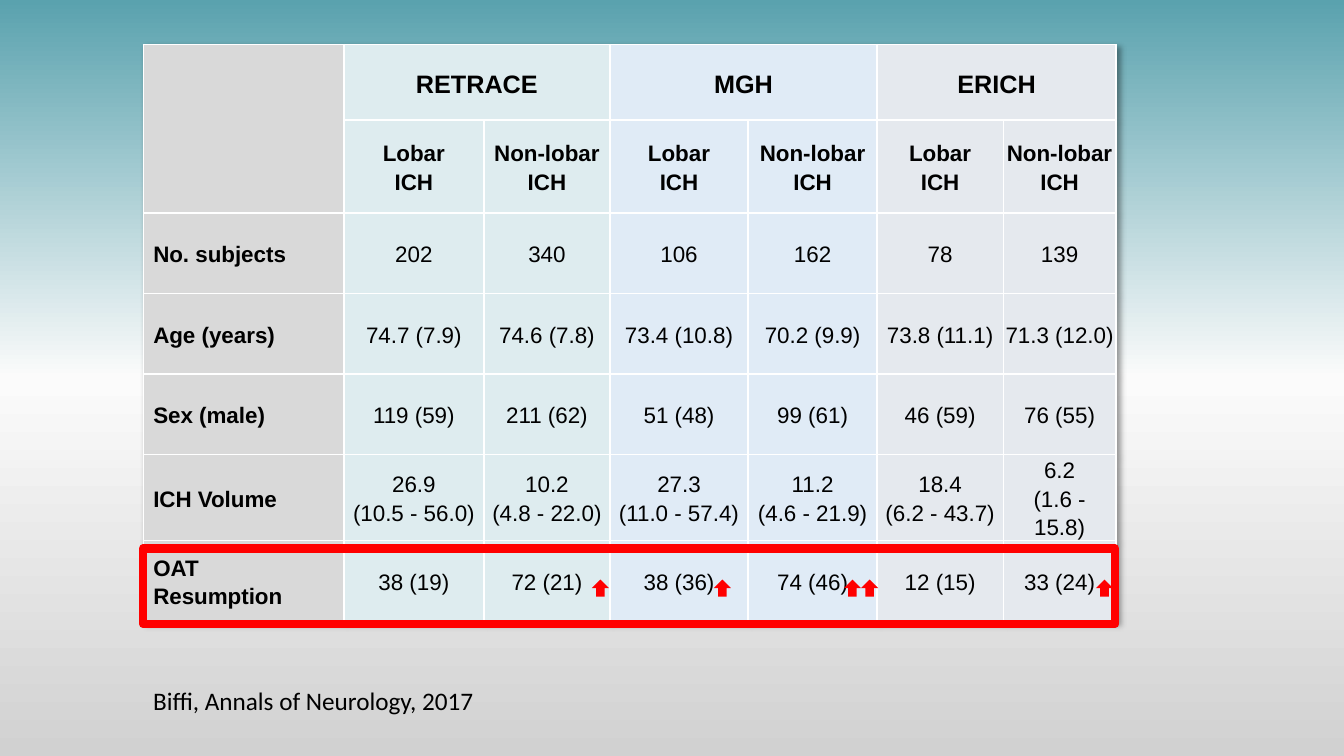
from lxml import etree
from pptx import Presentation
from pptx.dml.color import RGBColor
from pptx.enum import shapes, text
from pptx.oxml import ns, parse_xml
from pptx.util import Inches, Pt

COLORS = {
    "sky": "5AA2AE", "horizon": "FBFBFB", "ground": "D1D1D1",
    "labels": "D9D9D9", "retrace": "DEECEF", "mgh": "E0EBF6", "erich": "E5E9EE",
    "grid": "FFFFFF", "ink": "000000", "accent": "FF0000",
}
DRAWING = ns.nsdecls("a")

COLUMN_WIDTHS = [1.99, 1.39, 1.25, 1.37, 1.28, 1.25, 1.12]
ROW_HEIGHTS = [0.75, 0.92, 0.8, 0.8, 0.8, 0.8, 0.8]
COHORTS = ["RETRACE", "MGH", "ERICH"]
COLUMN_COLORS = ["labels"] + [name.lower() for name in COHORTS for _ in range(2)]
MEASURES = [
    ["No. subjects", "202", "340", "106", "162", "78", "139"],
    ["Age (years)", "74.7 (7.9)", "74.6 (7.8)", "73.4 (10.8)",
     "70.2 (9.9)", "73.8 (11.1)", "71.3 (12.0)"],
    ["Sex (male)", "119 (59)", "211 (62)", "51 (48)", "99 (61)", "46 (59)", "76 (55)"],
    ["ICH Volume", "26.9\n(10.5 - 56.0)", "10.2\n(4.8 - 22.0)", "27.3\n(11.0 - 57.4)",
     "11.2\n(4.6 - 21.9)", "18.4\n(6.2 - 43.7)", "6.2\n(1.6 - 15.8)"],
    ["OAT\nResumption", "38 (19)", "72 (21)", "38 (36)", "74 (46)", "12 (15)", "33 (24)"],
]
ARROW_OFFSETS = [4.45, 5.66, 6.95, 7.12, 9.45]


def rgb(name):
    return RGBColor.from_string(COLORS[name])


def paint_background(slide):
    fill = slide.background.fill
    fill.gradient()
    fill.gradient_angle = 270
    stops = next(slide.element.iter(ns.qn("a:gsLst")))
    for stop in list(stops):
        stops.remove(stop)
    for percent, name in [(0, "sky"), (50, "horizon"), (100, "ground")]:
        stops.append(parse_xml(
            f'<a:gs {DRAWING} pos="{percent * 1000}">'
            f'<a:srgbClr val="{COLORS[name]}"/></a:gs>'))


def add_run(paragraph, words, size, font, bold=False):
    run = paragraph.add_run()
    run.text = words
    run.font.size = Pt(size)
    run.font.name = font
    run.font.bold = bold
    run.font.color.rgb = rgb("ink")


def draw_borders(cell, row, column):
    """Heavier rules separate the cohorts and close the header."""
    last_column = column + cell.span_width - 1 if cell.is_merge_origin else column
    last_row = row + cell.span_height - 1 if cell.is_merge_origin else row
    heavy = {
        "L": column in (1, 3, 5), "R": last_column in (0, 2, 4),
        "T": row == 2, "B": last_row == 1,
    }
    properties = cell._tc.get_or_add_tcPr()
    for side, is_heavy in heavy.items():
        properties.append(parse_xml(
            f'<a:ln{side} {DRAWING} w="{Pt(1.5 if is_heavy else 1)}"><a:solidFill>'
            f'<a:srgbClr val="{COLORS["grid"]}"/></a:solidFill></a:ln{side}>'))


def fill_cell(cell, row, column, words):
    draw_borders(cell, row, column)
    cell.fill.solid()
    cell.fill.fore_color.rgb = rgb(COLUMN_COLORS[column])
    cell.vertical_anchor = text.MSO_ANCHOR.MIDDLE
    cell.margin_left = Inches(0.02 if column else 0.1)
    cell.margin_right = Inches(0.02)
    cell.margin_top = cell.margin_bottom = 0
    if not words:
        return
    for index, line in enumerate(words.split("\n")):
        frame = cell.text_frame
        paragraph = frame.add_paragraph() if index else frame.paragraphs[0]
        paragraph.line_spacing = 1.15
        paragraph.alignment = text.PP_ALIGN.CENTER if column else text.PP_ALIGN.LEFT
        add_run(paragraph, line, 16 if row else 18, "Arial", row < 2 or column == 0)


def add_cohort_table(slide, left, top, width, height):
    table = slide.shapes.add_table(
        len(ROW_HEIGHTS), len(COLUMN_WIDTHS),
        Inches(left), Inches(top), Inches(width), Inches(height)).table
    table.first_row = table.horz_banding = False
    for column, size in zip(table.columns, COLUMN_WIDTHS):
        column.width = Inches(size)
    for row, size in zip(table.rows, ROW_HEIGHTS):
        row.height = Inches(size)

    # Soft shadow behind the table
    table._tbl.tblPr.insert(0, etree.fromstring(
        f'<a:effectLst {DRAWING}><a:outerShdw blurRad="50800" dist="38100" dir="2700000" '
        'algn="tl" rotWithShape="0"><a:srgbClr val="000000"><a:alpha val="40000"/>'
        '</a:srgbClr></a:outerShdw></a:effectLst>'))

    # Corner and cohort headings span several cells
    table.cell(0, 0).merge(table.cell(1, 0))
    for column in (1, 3, 5):
        table.cell(0, column).merge(table.cell(0, column + 1))

    cohort_row = [""] + [words for name in COHORTS for words in (name, "")]
    site_row = [""] + ["Lobar\nICH", "Non-lobar\nICH"] * len(COHORTS)
    for row, entries in enumerate([cohort_row, site_row] + MEASURES):
        for column, words in enumerate(entries):
            fill_cell(table.cell(row, column), row, column, words)


def add_resumption_highlight(slide, left, top, width, height):
    frame = slide.shapes.add_shape(
        shapes.MSO_SHAPE.RECTANGLE,
        Inches(left), Inches(top), Inches(width), Inches(height))
    frame.shadow.inherit = False
    frame.fill.background()
    frame.line.color.rgb = rgb("accent")
    frame.line.width = Pt(6)

    # Arrows beside the raised rates
    for offset in ARROW_OFFSETS:
        arrow = slide.shapes.add_shape(
            shapes.MSO_SHAPE.UP_ARROW, Inches(left + offset), Inches(top + 0.31),
            Inches(0.17), Inches(0.17))
        arrow.shadow.inherit = False
        arrow.fill.solid()
        arrow.fill.fore_color.rgb = rgb("accent")
        arrow.line.fill.background()


def add_citation(slide, left, top, width, height):
    citation = slide.shapes.add_textbox(
        Inches(left), Inches(top), Inches(width), Inches(height)).text_frame
    citation.word_wrap = True
    citation.auto_size = text.MSO_AUTO_SIZE.SHAPE_TO_FIT_TEXT
    add_run(citation.paragraphs[0], "Biffi, Annals of Neurology, 2017", 18, "Calibri")


def main():
    deck = Presentation()
    deck.slide_width, deck.slide_height = Inches(13.33), Inches(7.5)
    slide = deck.slides.add_slide(deck.slide_layouts[6])
    paint_background(slide)
    add_cohort_table(slide, 1.42, 0.44, 9.64, 5.76)
    add_resumption_highlight(slide, 1.42, 5.44, 9.64, 0.75)
    add_citation(slide, 1.42, 6.75, 4.02, 0.4)
    deck.save("out.pptx")


if __name__ == "__main__":
    main()
